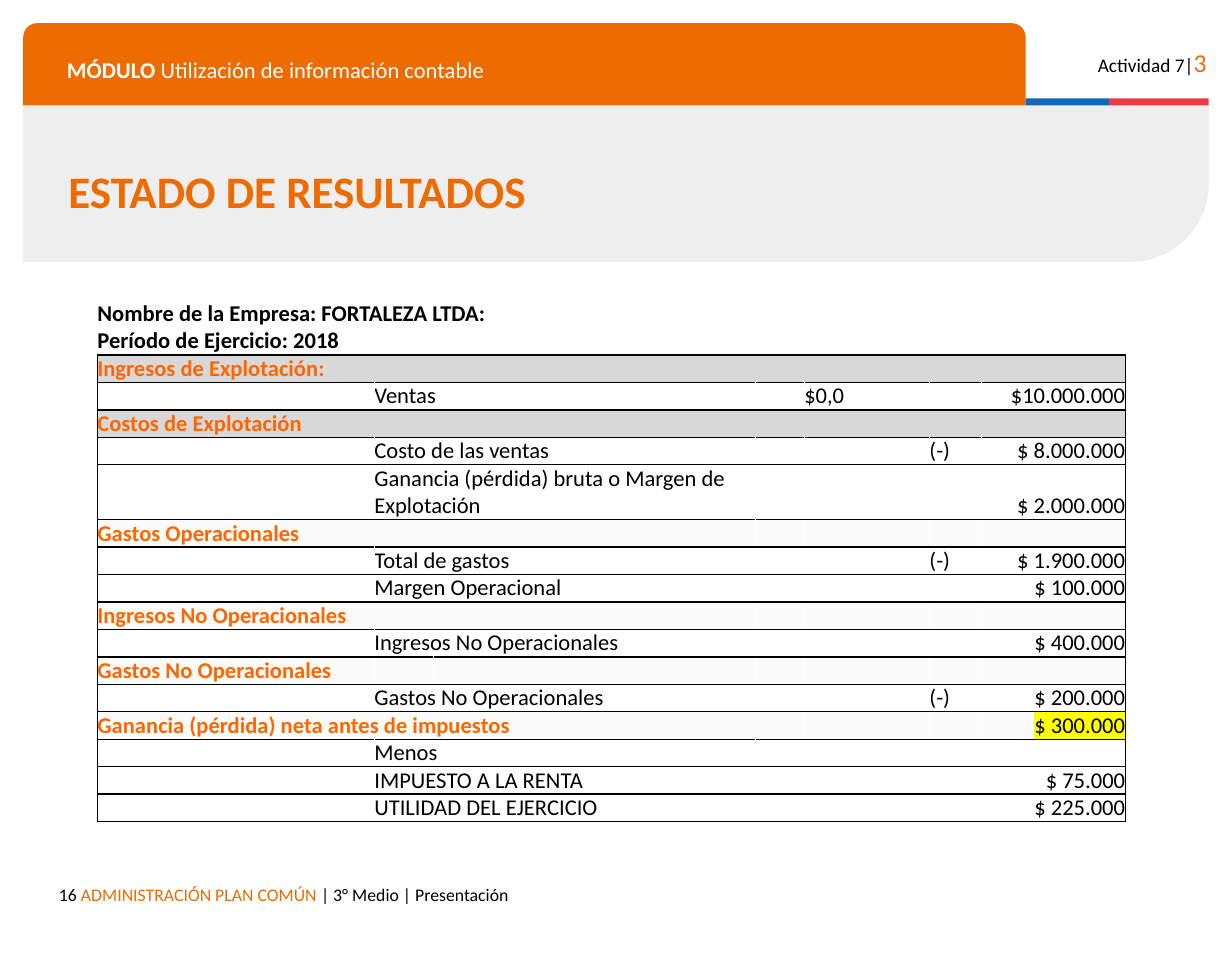
from dataclasses import dataclass
from lxml.etree import SubElement as Sub
from pptx import Presentation
from pptx.dml.color import RGBColor as Rgb
from pptx.enum.shapes import MSO_SHAPE as Kind
from pptx.enum.text import MSO_ANCHOR as Anchor, MSO_AUTO_SIZE as Fit, PP_ALIGN as Align
from pptx.oxml.ns import qn
from pptx.util import Pt


@dataclass(frozen=True)
class Theme:
    font: str = "Calibri"
    brand: str = "ED6B00"
    head: str = "FF6600"
    ink: str = "000000"
    page: str = "FFFFFF"
    panel: str = "EEEEEE"
    blue: str = "0F69B4"
    red: str = "EB3C46"
    grey: str = "D8D8D8"
    pale: str = "FBFBFB"
    mark: str = "FFFF00"
    title: int = 28
    large: int = 16
    body: int = 14
    small: int = 12
    foot: int = 11


class Deck:
    """Draws styled elements on one slide, with 100 px to the inch."""

    scale = 9144

    def __init__(self, theme, wide, high):
        self.theme = theme
        self.show = Presentation()
        self.show.slide_width, self.show.slide_height = self.emu(wide, high)
        self.slide = self.show.slides.add_slide(self.show.slide_layouts[5])
        self.shapes = self.slide.shapes

    def emu(self, *sizes):
        return [size * self.scale for size in sizes]

    def style(self, font, size, color, bold=False):
        font.name, font.size, font.bold = self.theme.font, Pt(size), bold
        font.color.rgb = Rgb.from_string(color)

    def frame(self, shape, anchor):
        frame = shape.text_frame
        frame.word_wrap, frame.auto_size = True, Fit.NONE
        frame.vertical_anchor = anchor
        frame.margin_left, frame.margin_top, frame.margin_right, frame.margin_bottom = self.emu(10, 10, 10, 10)
        return frame.paragraphs[0]

    def block(self, kind, box, color, *rounds):
        shape = self.shapes.add_shape(kind, *self.emu(*box))
        shape.shadow.inherit = False
        shape.fill.solid()
        shape.fill.fore_color.rgb = Rgb.from_string(color)
        shape.line.fill.background()
        for spot, value in enumerate(rounds):
            shape.adjustments[spot] = value
        return shape

    def panel(self, box, color):
        shape = self.block(Kind.ROUND_1_RECTANGLE, box, color, 0.5)
        shape.rotation = 180
        shape._element.spPr.find(qn("a:xfrm")).set("flipH", "1")

    def text(self, box, parts, align=Align.LEFT):
        para = self.frame(self.shapes.add_textbox(*self.emu(*box)), Anchor.TOP)
        para.alignment = align
        for words, *look in parts:
            run = para.add_run()
            run.text = words
            self.style(run.font, *look)

    def title(self, box, words):
        shape = self.shapes.title
        shape.left, shape.top, shape.width, shape.height = self.emu(*box)
        para = self.frame(shape, Anchor.MIDDLE)
        para.text, para.alignment, para.line_spacing = words, Align.LEFT, 0.8
        self.style(para.font, self.theme.title, self.theme.brand, True)
        self.shapes._spTree.append(shape._element)

    def edge(self, cell, **sides):
        for side, color in sides.items():
            line = Sub(cell._tc.get_or_add_tcPr(), qn(f"a:ln{side}"), w=str(Pt(1)))
            Sub(Sub(line, qn("a:solidFill")), qn("a:srgbClr"), val=color)

    def label(self, cell, words, color, bold, align, anchor, mark):
        cell.margin_left = cell.margin_top = cell.margin_right = cell.margin_bottom = 0
        cell.vertical_anchor = anchor
        cell.text = words
        size = self.theme.body
        for para in cell.text_frame.paragraphs:
            para.alignment = align
            self.style(para.font, size, color, bold)
            if not para.runs:
                Sub(para._p, qn("a:endParaRPr"), sz=str(size * 100))
            for run in para.runs if mark else ():
                glow = Sub(run._r.get_or_add_rPr(), qn("a:highlight"))
                Sub(glow, qn("a:srgbClr"), val=self.theme.mark)

    def table(self, left, top, cols, highs, rows):
        look = self.theme
        count = len(cols)
        box = self.emu(left, top, sum(cols), sum(highs))
        grid = self.shapes.add_table(len(rows), count, *box).table
        grid.first_row = grid.horz_banding = False
        for col, wide in zip(grid.columns, self.emu(*cols)):
            col.width = wide
        for line, high in zip(grid.rows, self.emu(*highs)):
            line.height = high
        for row, (fill, spans, words) in enumerate(rows):
            rim = look.ink if row else look.page
            col = 0
            while col < count:
                end = col + spans.get(col, 1)
                if end - col > 1:
                    grid.cell(row, col).merge(grid.cell(row, end - 1))
                for spot in range(col, end):
                    cell = grid.cell(row, spot)
                    self.edge(cell, L=look.page if col else rim,
                              R=rim if end == count else look.page, T=rim, B=look.ink)
                    cell.fill.solid()
                    cell.fill.fore_color.rgb = Rgb.from_string(fill)
                    last = spot == count - 1
                    self.label(cell, words.get(spot, ""),
                               look.head if row and not spot else look.ink, spot == 0,
                               Align.RIGHT if last else Align.LEFT,
                               Anchor.BOTTOM if row else Anchor.MIDDLE,
                               last and 0 in words)
                col = end


def head(words, fill, span, total=""):
    return fill, {0: span}, {0: words, 6: total}


def item(words, total="", span=2, note="", sign=""):
    return Theme.page, {1: span}, {1: words, 4: note, 5: sign, 6: total}


def main():
    look = Theme()
    deck = Deck(look, 1063, 827)
    deck.panel((20, 91, 1023, 135), look.panel)
    deck.block(Kind.ROUND_2_SAME_RECTANGLE, (20, 20, 865, 71), look.brand, 0.17, 0)
    deck.block(Kind.RECTANGLE, (885, 85, 72, 6), look.blue)
    deck.block(Kind.RECTANGLE, (957, 85, 86, 6), look.red)
    deck.text((923, 30, 128, 38), [("Actividad 7|", look.small, look.ink),
                                   ("3", look.large, look.brand)], Align.RIGHT)
    deck.text((48, 38, 814, 35), [("MÓDULO", look.body, look.page, True),
                                  (" Utilización de información contable", look.body, look.page)])
    deck.text((41, 753, 742, 38), [("16 ", look.foot, look.ink),
                                   ("ADMINISTRACIÓN PLAN COMÚN ", look.foot, look.brand),
                                   ("| 3° Medio | Presentación", look.foot, look.ink)])
    deck.title((49, 151, 979, 35), "ESTADO DE RESULTADOS")
    rows = [
        (look.page, {0: 3, 3: 4},
         {0: "Nombre de la Empresa: FORTALEZA LTDA:\nPeríodo de Ejercicio: 2018"}),
        head("Ingresos de Explotación:", look.grey, 7),
        item("Ventas", "$10.000.000", note="$0,0"),
        head("Costos de Explotación", look.grey, 7),
        item("Costo de las ventas", "$ 8.000.000", sign="(-)"),
        item("Ganancia (pérdida) bruta o Margen de Explotación", "$ 2.000.000", 3),
        head("Gastos Operacionales", look.pale, 3),
        item("Total de gastos", "$ 1.900.000", sign="(-)"),
        item("Margen Operacional", "$ 100.000"),
        head("Ingresos No Operacionales", look.pale, 3),
        item("Ingresos No Operacionales", "$ 400.000"),
        head("Gastos No Operacionales", look.pale, 1),
        item("Gastos No Operacionales", "$ 200.000", sign="(-)"),
        head("Ganancia (pérdida) neta antes de impuestos", look.pale, 4, "$ 300.000"),
        item("Menos"),
        item("IMPUESTO A LA RENTA", "$ 75.000"),
        item("UTILIDAD DEL EJERCICIO", "$ 225.000"),
    ]
    highs = [33] + [17] * (len(rows) - 1)
    deck.table(84, 259, [239, 51, 278, 42, 108, 45, 124], highs, rows)
    deck.show.save("out.pptx")


if __name__ == "__main__":
    main()
